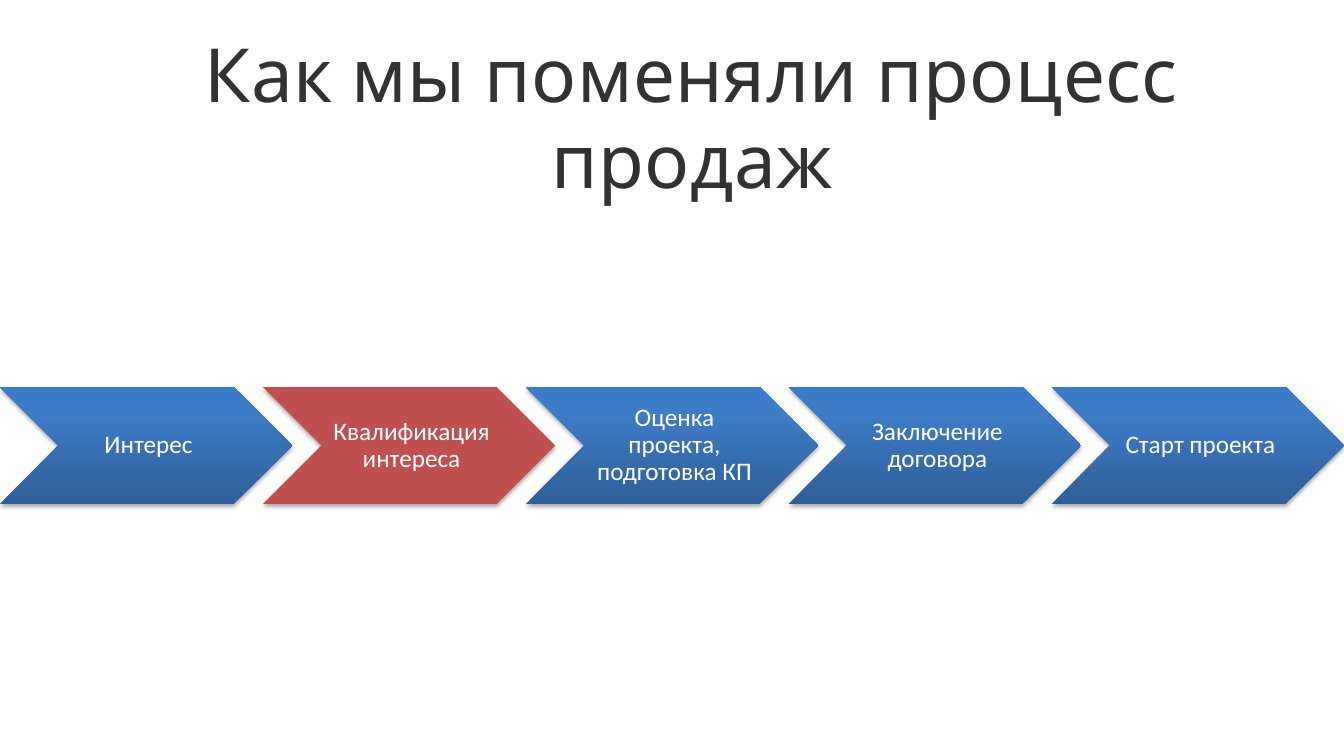
from lxml import etree
from pptx import Presentation
from pptx.dml.color import RGBColor
from pptx.enum.shapes import MSO_SHAPE
from pptx.enum.text import MSO_ANCHOR, PP_ALIGN
from pptx.oxml import parse_xml
from pptx.oxml.ns import nsdecls, qn
from pptx.util import Inches, Pt

CHEVRON = MSO_SHAPE.CHEVRON
MIDDLE = MSO_ANCHOR.MIDDLE
CENTER = PP_ALIGN.CENTER

THEME = {
    "title_font": "Karla",
    "title_size": 53.3,
    "title_color": "323232",
    "step_font": "Calibri",
    "step_size": 18,
    "step_color": "FFFFFF",
    "highlight": "C0504D",
    "gradient": [(0, "2F5F99"), (80, "3D7CC7"), (100, "3A7CCB")],
}

STEPS = [
    "Интерес",
    "Квалификация интереса",
    "Оценка проекта, подготовка КП",
    "Заключение договора",
    "Старт проекта",
]
NEW_STEP = 1


def write_text(shape, text, role, line_spacing, insets):
    frame = shape.text_frame
    frame.text = text
    frame.word_wrap = True
    frame.vertical_anchor = MIDDLE
    frame.margin_left, frame.margin_top, frame.margin_right, frame.margin_bottom = map(Inches, insets)
    paragraph = frame.paragraphs[0]
    paragraph.alignment = CENTER
    paragraph.line_spacing = line_spacing
    run = paragraph.runs[0]
    run.font.name = THEME[role + "_font"]
    run.font.size = Pt(THEME[role + "_size"])
    run.font.color.rgb = RGBColor.from_string(THEME[role + "_color"])
    return run


def add_shadow(shape):
    shape.shadow.inherit = False
    effects = shape._element.spPr.find(qn("a:effectLst"))
    effects.append(parse_xml(
        f'<a:outerShdw {nsdecls("a")} blurRad="{Pt(3.1)}" dist="{Pt(1.8)}" dir="5400000" rotWithShape="0">'
        '<a:srgbClr val="000000"><a:alpha val="35000"/></a:srgbClr></a:outerShdw>'
    ))


presentation = Presentation()
presentation.slide_width = Inches(13.33)
presentation.slide_height = Inches(7.5)
slide = presentation.slides.add_slide(presentation.slide_layouts[6])

title = slide.shapes.add_textbox(Inches(0.84), Inches(0.6), Inches(12.05), Inches(2.02))
title_run = write_text(title, "Как мы поменяли процесс продаж", "title", 0.95, (0.2, 0.16, 0.2, 1))
title_run._r.get_or_add_rPr().set("spc", "40")

pitch_share = 0.9
step_width = presentation.slide_width / (1 + pitch_share * (len(STEPS) - 1))
step_height = step_width * 0.4
step_top = presentation.slide_height * 0.512

for index, name in enumerate(STEPS):
    left = index * pitch_share * step_width
    step = slide.shapes.add_shape(CHEVRON, int(left), int(step_top), int(step_width), int(step_height))
    step.line.fill.background()
    if index == NEW_STEP:
        step.fill.solid()
        step.fill.fore_color.rgb = RGBColor.from_string(THEME["highlight"])
    else:
        step.fill.gradient()
        step.fill.gradient_angle = 90
        stops = step._element.spPr.find(qn("a:gradFill")).find(qn("a:gsLst"))
        stops.clear()
        for position, color in THEME["gradient"]:
            stop = etree.SubElement(stops, qn("a:gs"), pos=str(position * 1000))
            etree.SubElement(stop, qn("a:srgbClr"), val=color)
    add_shadow(step)
    write_text(step, name, "step", 0.9, (0.08, 0.03, 0.03, 0.03))

presentation.save("out.pptx")
